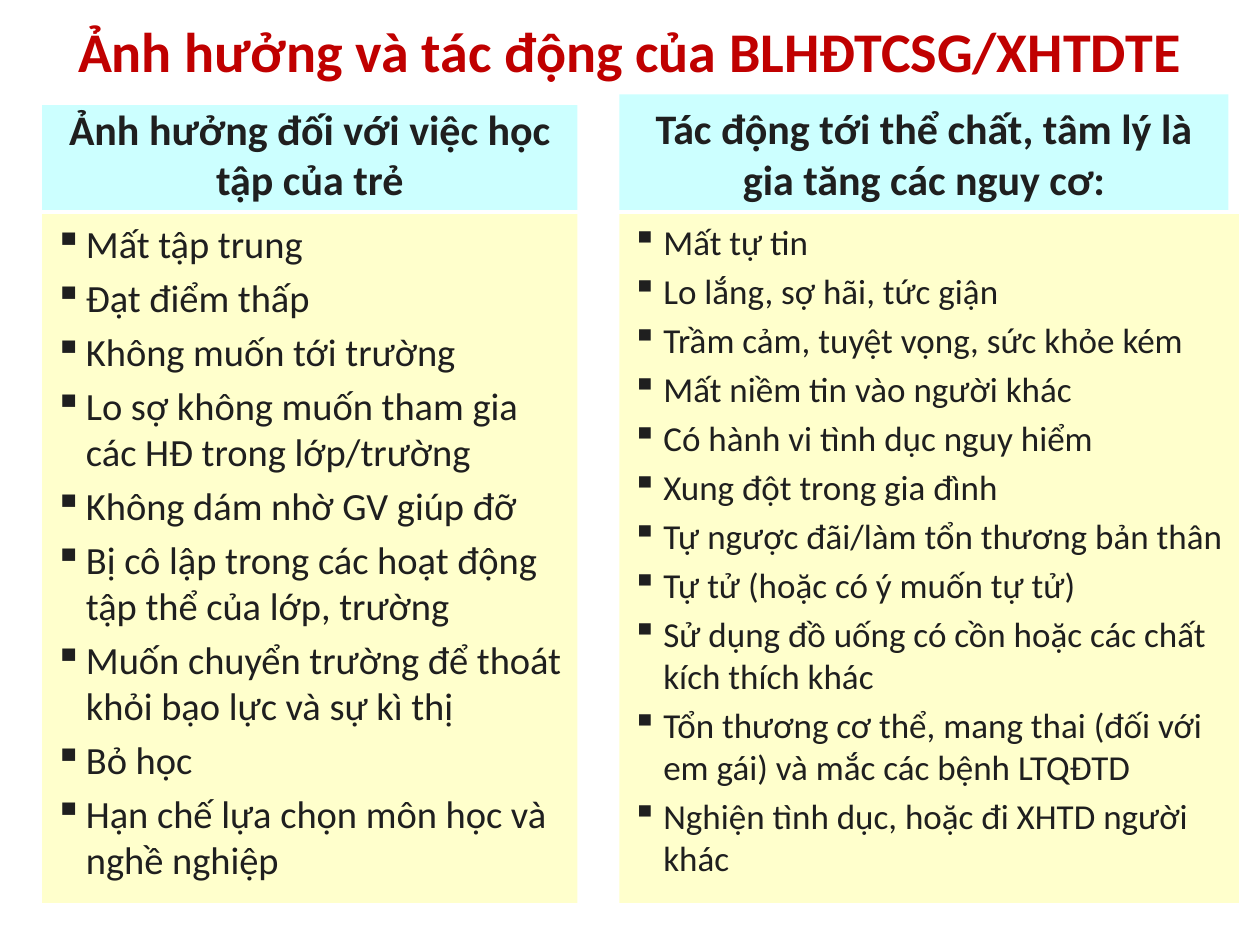
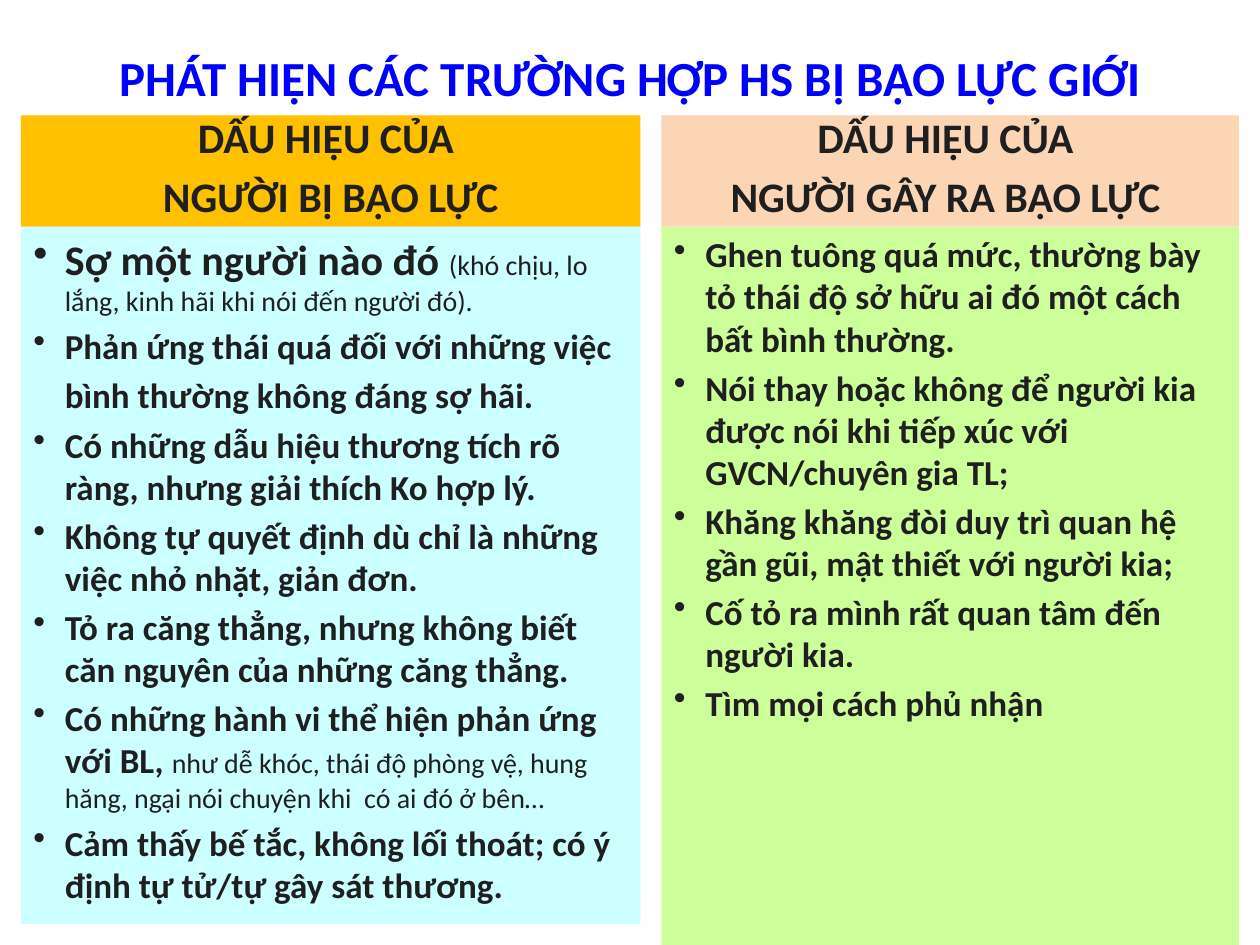
from dataclasses import dataclass

import lxml.etree
import pptx
import pptx.dml.color
import pptx.enum.shapes
import pptx.enum.text
import pptx.oxml.ns
import pptx.util

ALIGN = pptx.enum.text.PP_ALIGN
ANCHOR = pptx.enum.text.MSO_ANCHOR
COLUMNS, ROWS = 120, 90


@dataclass(frozen=True)
class Theme:
    font: str = "Calibri"
    text: str = "1F1F1F"
    red: str = "C00000"
    blue: str = "0000FF"
    aqua: str = "CCFFFF"
    cream: str = "FFFFCC"
    amber: str = "FFC000"
    peach: str = "FCD5B5"
    lime: str = "CCFF99"
    heading: int = 24
    large: int = 22
    regular: int = 20
    aside: int = 16
    gap: float = 0.2
    indent: float = 0.25


THEME = Theme()

EFFECTS_ON_STUDY = [
    "Mất tập trung",
    "Đạt điểm thấp",
    "Không muốn tới trường",
    "Lo sợ không muốn tham gia các HĐ trong lớp/trường",
    "Không dám nhờ GV giúp đỡ",
    "Bị cô lập trong các hoạt động tập thể của lớp, trường",
    "Muốn chuyển trường để thoát khỏi bạo lực và sự kì thị",
    "Bỏ học",
    "Hạn chế lựa chọn môn học và nghề nghiệp",
]
HEALTH_RISKS = [
    "Mất tự tin",
    "Lo lắng, sợ hãi, tức giận",
    "Trầm cảm, tuyệt vọng, sức khỏe kém",
    "Mất niềm tin vào người khác",
    "Có hành vi tình dục nguy hiểm",
    "Xung đột trong gia đình",
    "Tự ngược đãi/làm tổn thương bản thân",
    "Tự tử (hoặc có ý muốn tự tử)",
    "Sử dụng đồ uống có cồn hoặc các chất kích thích khác",
    "Tổn thương cơ thể, mang thai (đối với em gái) và mắc các bệnh LTQĐTD",
    "Nghiện tình dục, hoặc đi XHTD người khác",
]
# An entry of mixed type is a list of (text, size, bold).
VICTIM_SIGNS = [
    [("Sợ một người nào đó ", THEME.heading, True),
     ("(khó chịu, lo lắng, kinh hãi khi nói đến người đó).", THEME.aside, False)],
    [("Phản ứng thái quá đối với những việc bình thường không đáng sợ hãi.",
      THEME.regular, True),
     (" ", THEME.heading, False)],
    "Có những dẫu hiệu thương tích rõ ràng, nhưng giải thích Ko hợp lý.",
    "Không tự quyết định dù chỉ là những việc nhỏ nhặt, giản đơn.",
    "Tỏ ra căng thẳng, nhưng không biết căn nguyên của những căng thẳng.",
    [("Có những hành vi thể hiện phản ứng với BL, ", THEME.regular, True),
     ("như dễ khóc, thái độ phòng vệ, hung hăng, ngại nói chuyện khi  có ai đó ở bên…",
      THEME.aside, False)],
    "Cảm thấy bế tắc, không lối thoát; có ý định tự tử/tự gây sát thương.",
]
ABUSER_SIGNS = [
    "Ghen tuông quá mức, thường bày tỏ thái độ sở hữu ai đó một cách bất bình thường.",
    "Nói thay hoặc không để người kia được nói khi tiếp xúc với GVCN/chuyên gia TL;",
    "Khăng khăng đòi duy trì quan hệ gần gũi, mật thiết với người kia;",
    "Cố tỏ ra mình rất quan tâm đến người kia.",
    "Tìm mọi cách phủ nhận",
]


def to_slide(deck, box):
    """Turn a box in grid columns and rows into slide lengths."""
    left, top, width, height = box
    column, row = deck.slide_width / COLUMNS, deck.slide_height / ROWS
    return [round(n) for n in (left * column, top * row, width * column, height * row)]


def style_font(font, size, bold, color=THEME.text):
    font.name = THEME.font
    font.size = pptx.util.Pt(size)
    font.bold = bold
    font.color.rgb = pptx.dml.color.RGBColor.from_string(color)


def add_bullet(paragraph, mark):
    properties = paragraph._p.get_or_add_pPr()
    indent = pptx.util.Inches(THEME.indent)
    properties.set("marL", str(indent))
    properties.set("indent", str(-indent))
    bullet = lxml.etree.SubElement(properties, pptx.oxml.ns.qn("a:buChar"))
    bullet.set("char", mark)


def write_lines(frame, entries, size, bold, align, mark=None):
    for number, entry in enumerate(entries):
        line = frame.add_paragraph() if number else frame.paragraphs[0]
        line.alignment = align
        mixed = not isinstance(entry, str)
        first_size = entry[0][1] if mixed else size
        if number:
            line.space_before = pptx.util.Pt(first_size * THEME.gap)
        if mark:
            add_bullet(line, mark)
        style_font(line.font, first_size, bold)
        if not mixed:
            line.add_run().text = entry
            continue
        for text, run_size, run_bold in entry:
            run = line.add_run()
            run.text = text
            run.font.size = pptx.util.Pt(run_size)
            run.font.bold = run_bold


def add_title(deck, slide, text, top, size, color):
    title = slide.shapes.add_textbox(*to_slide(deck, (6, top, 108, 7.5)))
    frame = title.text_frame
    frame.word_wrap = True
    frame.vertical_anchor = ANCHOR.MIDDLE
    line = frame.paragraphs[0]
    line.alignment = ALIGN.CENTER
    style_font(line.font, size, True, color)
    line.add_run().text = text


def add_panel(deck, slide, box, fill, anchor):
    panel = slide.shapes.add_shape(
        pptx.enum.shapes.MSO_SHAPE.RECTANGLE, *to_slide(deck, box))
    panel.shadow.inherit = False
    panel.fill.solid()
    panel.fill.fore_color.rgb = pptx.dml.color.RGBColor.from_string(fill)
    panel.line.fill.background()
    panel.text_frame.word_wrap = True
    panel.text_frame.vertical_anchor = anchor
    return panel.text_frame


def add_column(deck, slide, box, split, heading, entries, fills,
               size, bold, mark, heading_width=None):
    """Stack a heading band over a bulleted panel, the band ending at row split."""
    left, top, width, height = box
    band_end, panel_top = split
    band = add_panel(deck, slide, (left, top, heading_width or width, band_end - top),
                     fills[0], ANCHOR.BOTTOM)
    write_lines(band, heading, THEME.heading, True, ALIGN.CENTER)
    panel = add_panel(deck, slide, (left, panel_top, width, top + height - panel_top),
                      fills[1], ANCHOR.TOP)
    write_lines(panel, entries, size, bold, ALIGN.LEFT, mark)


def build_effects(deck, slide):
    add_title(deck, slide, "Ảnh hưởng và tác động của BLHĐTCSG/XHTDTE", 1, 32, THEME.red)
    split, fills = (20, 20.4), (THEME.aqua, THEME.cream)
    add_column(deck, slide, (4, 10, 51, 76), split,
               ["Ảnh hưởng đối với việc học tập của trẻ"],
               EFFECTS_ON_STUDY, fills, THEME.large, False, "▪")
    add_column(deck, slide, (59, 9, 59, 77), split,
               ["Tác động tới thể chất, tâm lý là gia tăng các nguy cơ:"],
               HEALTH_RISKS, fills, THEME.regular, False, "▪", heading_width=58)


def build_signs(deck, slide):
    add_title(deck, slide, "PHÁT HIỆN CÁC TRƯỜNG HỢP HS BỊ BẠO LỰC GIỚI", 3.6, 28, THEME.blue)
    split = (21.6, 21.6)
    add_column(deck, slide, (2, 11, 59, 77), split,
               ["DẤU HIỆU CỦA ", "NGƯỜI BỊ BẠO LỰC"],
               VICTIM_SIGNS, (THEME.amber, THEME.aqua), THEME.regular, True, "•")
    add_column(deck, slide, (63, 11, 55, 79), split,
               ["DẤU HIỆU CỦA ", "NGƯỜI GÂY RA BẠO LỰC "],
               ABUSER_SIGNS, (THEME.peach, THEME.lime), THEME.regular, True, "•")


def main():
    deck = pptx.Presentation()
    deck.slide_width = pptx.util.Inches(10)
    deck.slide_height = pptx.util.Inches(7.5)
    for build in (build_effects, build_signs):
        build(deck, deck.slides.add_slide(deck.slide_layouts[6]))
    deck.save("out.pptx")


if __name__ == "__main__":
    main()
